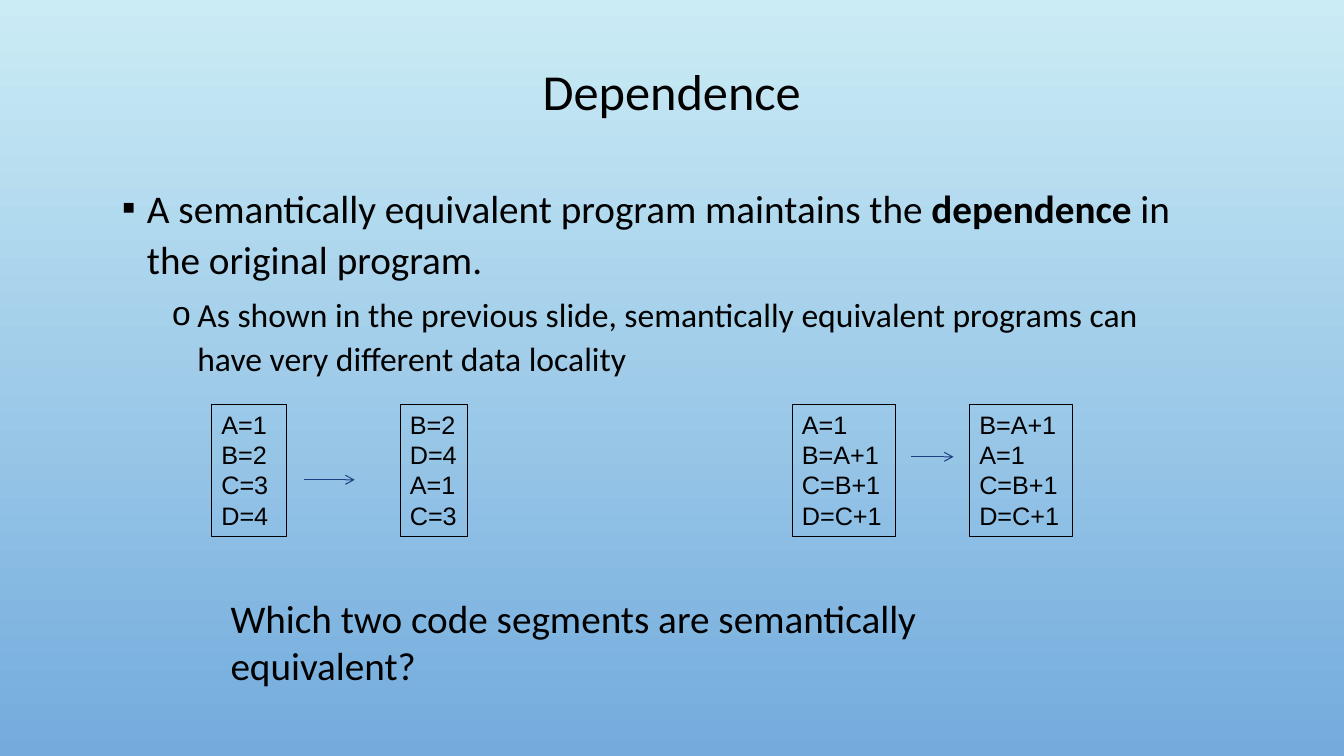
from lxml.etree import SubElement as Sub
from pptx import Presentation
from pptx.dml.color import RGBColor as Rgb
from pptx.enum.shapes import MSO_CONNECTOR as Link, MSO_SHAPE as Shape
from pptx.enum.text import MSO_ANCHOR as Anchor, MSO_AUTO_SIZE as Auto, PP_ALIGN as Align
from pptx.oxml.ns import qn
from pptx.util import Cm, Pt

COLORS = {"text": "000000", "arrow": "1F3F83", "top": "CBECF5", "base": "73ABDD"}
CODE_TOP = 10.19
CODE_TALL = 3.33


def color(name):
    return Rgb.from_string(COLORS[name])


def style(para, size, face="Calibri"):
    para.font.size = Pt(size)
    para.font.name = face
    para.font.color.rgb = color("text")


def paint(slide):
    fill = slide.background.fill
    fill.gradient()
    fill.gradient_angle = 270
    for stop, name, spot in zip(fill.gradient_stops, ("top", "base"), (0, 1)):
        stop.color.rgb = color(name)
        stop.position = spot


def add_text(slide, left, top, width, height, anchor=Anchor.TOP):
    box = slide.shapes.add_textbox(Cm(left), Cm(top), Cm(width), Cm(height))
    frame = box.text_frame
    frame.word_wrap = True
    frame.vertical_anchor = anchor
    return frame


def add_bullet(para, mark, left, size, parts):
    props = para._p.get_or_add_pPr()
    props.set("marL", str(Cm(left)))
    props.set("indent", str(-Cm(0.635)))
    tint = Sub(props, qn("a:buClr"))
    Sub(tint, qn("a:srgbClr"), val=COLORS["text"])
    Sub(props, qn("a:buFont"), typeface="Arial")
    Sub(props, qn("a:buChar"), char=mark)
    para.line_spacing = 1.1
    style(para, size)
    for words, bold in parts:
        run = para.add_run()
        run.text = words
        if bold:
            run.font.bold = True


def add_code(slide, left, width, lines, wrap=True):
    box = slide.shapes.add_shape(
        Shape.RECTANGLE, Cm(left), Cm(CODE_TOP), Cm(width), Cm(CODE_TALL))
    box.shadow.inherit = False
    box.fill.background()
    box.line.color.rgb = color("text")
    box.line.width = Pt(0.25)
    frame = box.text_frame
    frame.word_wrap = wrap
    frame.auto_size = Auto.SHAPE_TO_FIT_TEXT
    frame.vertical_anchor = Anchor.TOP
    frame.text = "\n".join(lines)
    for para in frame.paragraphs:
        para.alignment = Align.LEFT
        style(para, 18, "Arial")


def add_arrow(slide, start, end, level):
    arrow = slide.shapes.add_connector(
        Link.STRAIGHT, Cm(start), Cm(level), Cm(end), Cm(level))
    arrow.line.color.rgb = color("arrow")
    arrow.line.width = Pt(0.75)
    Sub(arrow.line._get_or_add_ln(), qn("a:tailEnd"), type="arrow")
    Sub(arrow._element.spPr, qn("a:effectLst"))


def main():
    deck = Presentation()
    deck.slide_width, deck.slide_height = Cm(33.87), Cm(19.05)
    slide = deck.slides.add_slide(deck.slide_layouts[6])
    paint(slide)

    title = add_text(slide, 2.54, 0.81, 28.78, 3.12, Anchor.MIDDLE).paragraphs[0]
    title.text = "Dependence"
    title.alignment = Align.CENTER
    title.line_spacing = 0.9
    style(title, 36)

    body = add_text(slide, 2.82, 4.39, 27.48, 5.41)
    add_bullet(body.paragraphs[0], "▪", 0.635, 28, [
        ("A semantically equivalent program maintains the ", False),
        ("dependence", True),
        (" in the original program.", False)])
    point = body.add_paragraph()
    point.level = 1
    point.space_before = Pt(5)
    add_bullet(point, "o", 1.905, 24, [
        ("As shown in the previous slide, semantically equivalent programs "
         "can have very different data locality", False)])

    add_code(slide, 5.33, 1.88, ["A=1", "B=2", "C=3", "D=4"])
    add_code(slide, 10.08, 1.7, ["B=2", "D=4", "A=1", "C=3"], False)
    add_code(slide, 19.96, 2.59, ["A=1", "B=A+1", "C=B+1", "D=C+1"])
    add_code(slide, 24.43, 2.59, ["B=A+1", "A=1", "C=B+1", "D=C+1"])
    add_arrow(slide, 7.67, 8.94, 12.09)
    add_arrow(slide, 22.96, 24.03, 11.51)

    query = add_text(slide, 5.56, 14.86, 22.33, 1.45).paragraphs[0]
    query.text = "Which two code segments are semantically equivalent?"
    style(query, 28)

    deck.save("out.pptx")


if __name__ == "__main__":
    main()
